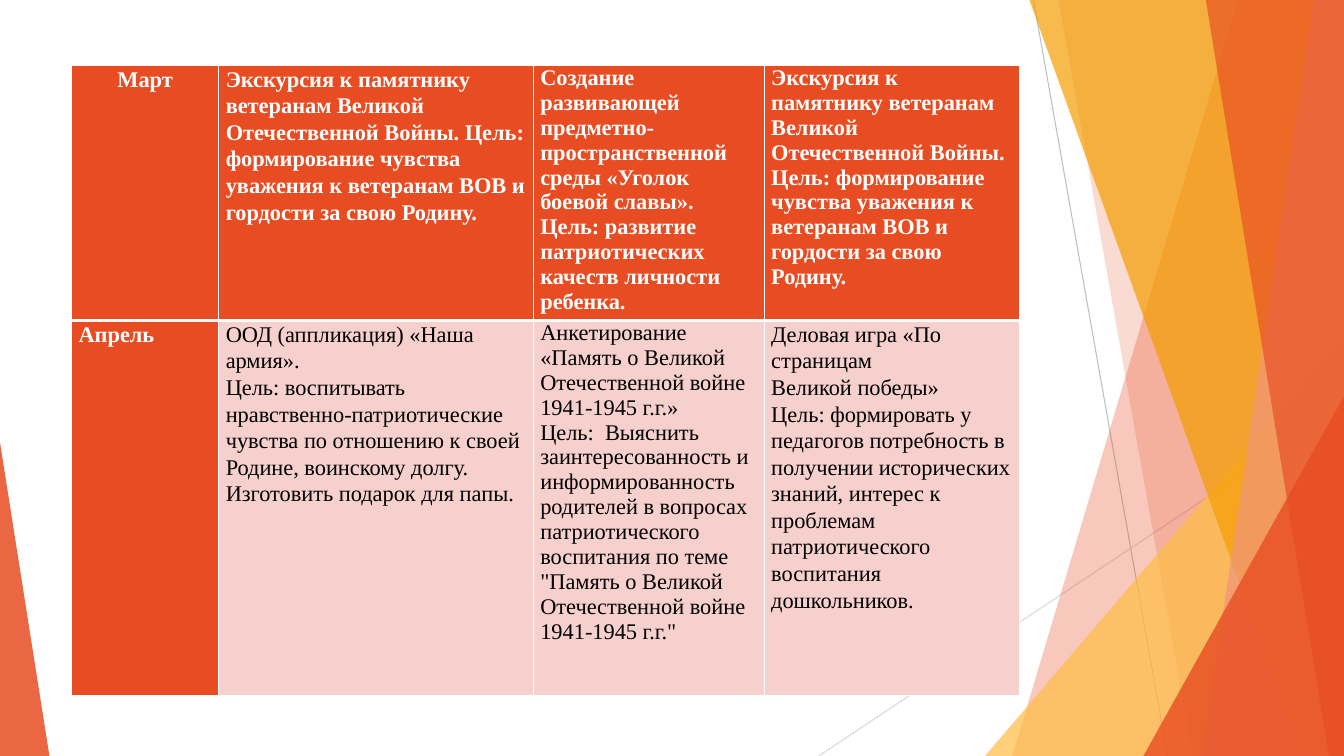
from dataclasses import dataclass

from lxml import etree
from pptx import Presentation
from pptx.dml.color import RGBColor
from pptx.enum import shapes, text
from pptx.oxml import ns
from pptx.util import Inches, Pt

WHITE = RGBColor(0xFF, 0xFF, 0xFF)
BLACK = RGBColor(0x00, 0x00, 0x00)
ORANGE_RED = RGBColor(0xE8, 0x4C, 0x22)
SALMON = RGBColor(0xF1, 0x94, 0x7A)
AMBER = RGBColor(0xF4, 0x9D, 0x00)
YELLOW = RGBColor(0xFF, 0xBD, 0x47)
PINK = RGBColor(0xF6, 0xD0, 0xCD)
GREY = RGBColor(0xBF, 0xBF, 0xBF)
LIGHT_GREY = RGBColor(0xD9, 0xD9, 0xD9)

FONT = "Times New Roman"
PAGE_WIDTH, PAGE_HEIGHT = 13.33, 7.5


@dataclass
class Ray:
    start: tuple[float, float]
    end: tuple[float, float]
    color: RGBColor


@dataclass
class Panel:
    """Band from its slanted left edge to the right side of the page."""
    top_x: float
    bottom_x: float
    color: RGBColor
    opacity: int


@dataclass
class Wedge:
    """Triangle standing on the bottom of the page."""
    left: float
    top: float
    width: float
    apex: float
    color: RGBColor
    opacity: int


@dataclass
class Entry:
    paragraphs: list[str]
    spacing: float = 1.0
    centered: bool = False


RAYS = [
    Ray((10.25, 0), (11.58, PAGE_HEIGHT), GREY),
    Ray((PAGE_WIDTH, 4.03), (8.12, PAGE_HEIGHT), LIGHT_GREY),
]
FACETS = [
    Panel(12.28, 10.04, ORANGE_RED, 30),
    Panel(10.5, 11.83, ORANGE_RED, 20),
    Wedge(9.77, 3.33, 3.56, 1, YELLOW, 72),
    Panel(10.21, 12.91, AMBER, 70),
    Panel(13.03, 11.92, SALMON, 70),
    Panel(11.96, 13.18, ORANGE_RED, 65),
    Wedge(11.34, 3.93, 1.99, 1, ORANGE_RED, 80),
    Wedge(0, 4.39, 0.49, 0, ORANGE_RED, 85),
]

EXCURSION = ("Экскурсия к памятнику ветеранам Великой Отечественной Войны. Цель: "
             "формирование чувства уважения к ветеранам ВОВ и гордости за свою Родину.")
COLUMN_WIDTHS = [1.46, 3.12, 2.29, 2.53]
ROW_HEIGHTS = [2.53, 3.72]
PLAN = [
    [
        Entry(["Март"], 1.07, centered=True),
        Entry([EXCURSION], 1.07),
        Entry(["Создание развивающей предметно-пространственной среды «Уголок боевой "
               "славы». Цель: развитие патриотических качеств личности ребенка."]),
        Entry([EXCURSION]),
    ],
    [
        Entry(["Апрель"], 1.07),
        Entry(["ООД (аппликация) «Наша армия».",
               "Цель: воспитывать нравственно-патриотические чувства по отношению к своей "
               "Родине, воинскому долгу. Изготовить подарок для папы."], 1.07),
        Entry(["Анкетирование «Память о Великой Отечественной войне 1941-1945 г.г.»",
               "Цель:  Выяснить заинтересованность и информированность родителей в "
               "вопросах патриотического воспитания по теме \"Память о Великой "
               "Отечественной войне 1941-1945 г.г.\""]),
        Entry(["Деловая игра «По страницам",
               "Великой победы»",
               "Цель: формировать у педагогов потребность в получении исторических "
               "знаний, интерес к проблемам патриотического воспитания дошкольников."], 1.07),
    ],
]


def draw_ray(page, ray: Ray) -> None:
    ends = [Inches(value) for value in ray.start + ray.end]
    line = page.shapes.add_connector(shapes.MSO_CONNECTOR.STRAIGHT, *ends)
    line.line.color.rgb = ray.color
    line.line.width = Pt(0.75)
    etree.SubElement(line._element.spPr, ns.qn("a:effectLst"))


def draw_facet(page, facet: Panel | Wedge) -> None:
    if isinstance(facet, Panel):
        corners = [(PAGE_WIDTH, 0), (PAGE_WIDTH, PAGE_HEIGHT), (facet.bottom_x, PAGE_HEIGHT)]
        outline = page.shapes.build_freeform(Inches(facet.top_x), 0)
        outline.add_line_segments([(Inches(x), Inches(y)) for x, y in corners])
        shape = outline.convert_to_shape()
    else:
        shape = page.shapes.add_shape(
            shapes.MSO_SHAPE.ISOSCELES_TRIANGLE, Inches(facet.left), Inches(facet.top),
            Inches(facet.width), Inches(PAGE_HEIGHT - facet.top))
        shape.adjustments[0] = facet.apex
    shape.shadow.inherit = False
    shape.line.fill.background()
    shape.fill.solid()
    shape.fill.fore_color.rgb = facet.color
    color = shape._element.spPr.find(".//" + ns.qn("a:srgbClr"))
    etree.SubElement(color, ns.qn("a:alpha")).set("val", str(facet.opacity * 1000))


def set_borders(cell, widths: dict[str, float]) -> None:
    properties = cell._tc.get_or_add_tcPr()
    for position, (side, width) in enumerate(widths.items()):
        border = etree.Element(ns.qn(f"a:ln{side}"), w=str(Pt(width)))
        fill = etree.SubElement(border, ns.qn("a:solidFill"))
        etree.SubElement(fill, ns.qn("a:srgbClr")).set("val", str(WHITE))
        properties.insert(position, border)


def fill_cell(cell, entry: Entry, is_heading: bool) -> None:
    cell.margin_left = cell.margin_right = Inches(0.07)
    cell.margin_top = cell.margin_bottom = 0
    cell.fill.solid()
    cell.fill.fore_color.rgb = ORANGE_RED if is_heading else PINK
    cell.text_frame.text = "\n".join(entry.paragraphs)
    for para in cell.text_frame.paragraphs:
        para.line_spacing = entry.spacing
        para.alignment = text.PP_ALIGN.CENTER if entry.centered else text.PP_ALIGN.LEFT
        for span in para.runs:
            span.font.name = FONT
            span.font.size = Pt(16)
            span.font.bold = is_heading
            span.font.color.rgb = WHITE if is_heading else BLACK


def draw_plan(page) -> None:
    frame = page.shapes.add_table(
        len(ROW_HEIGHTS), len(COLUMN_WIDTHS), Inches(0.71), Inches(0.65),
        Inches(sum(COLUMN_WIDTHS)), Inches(sum(ROW_HEIGHTS)))
    table = frame.table
    table.horz_banding = False
    for column, width in zip(table.columns, COLUMN_WIDTHS):
        column.width = Inches(width)
    for row, height in zip(table.rows, ROW_HEIGHTS):
        row.height = Inches(height)
    for r, entries in enumerate(PLAN):
        for c, entry in enumerate(entries):
            cell = table.cell(r, c)
            fill_cell(cell, entry, is_heading=r == 0 or c == 0)
            # The rule between the two months is thicker
            top, bottom = (1, 3) if r == 0 else (3, 1)
            set_borders(cell, {"L": 1, "R": 1, "T": top, "B": bottom})


def main() -> None:
    deck = Presentation()
    deck.slide_width = Inches(PAGE_WIDTH)
    deck.slide_height = Inches(PAGE_HEIGHT)
    page = deck.slides.add_slide(deck.slide_layouts[6])

    # Background decoration
    for ray in RAYS:
        draw_ray(page, ray)
    for facet in FACETS:
        draw_facet(page, facet)

    # Monthly plan
    draw_plan(page)
    deck.save("out.pptx")


if __name__ == "__main__":
    main()
